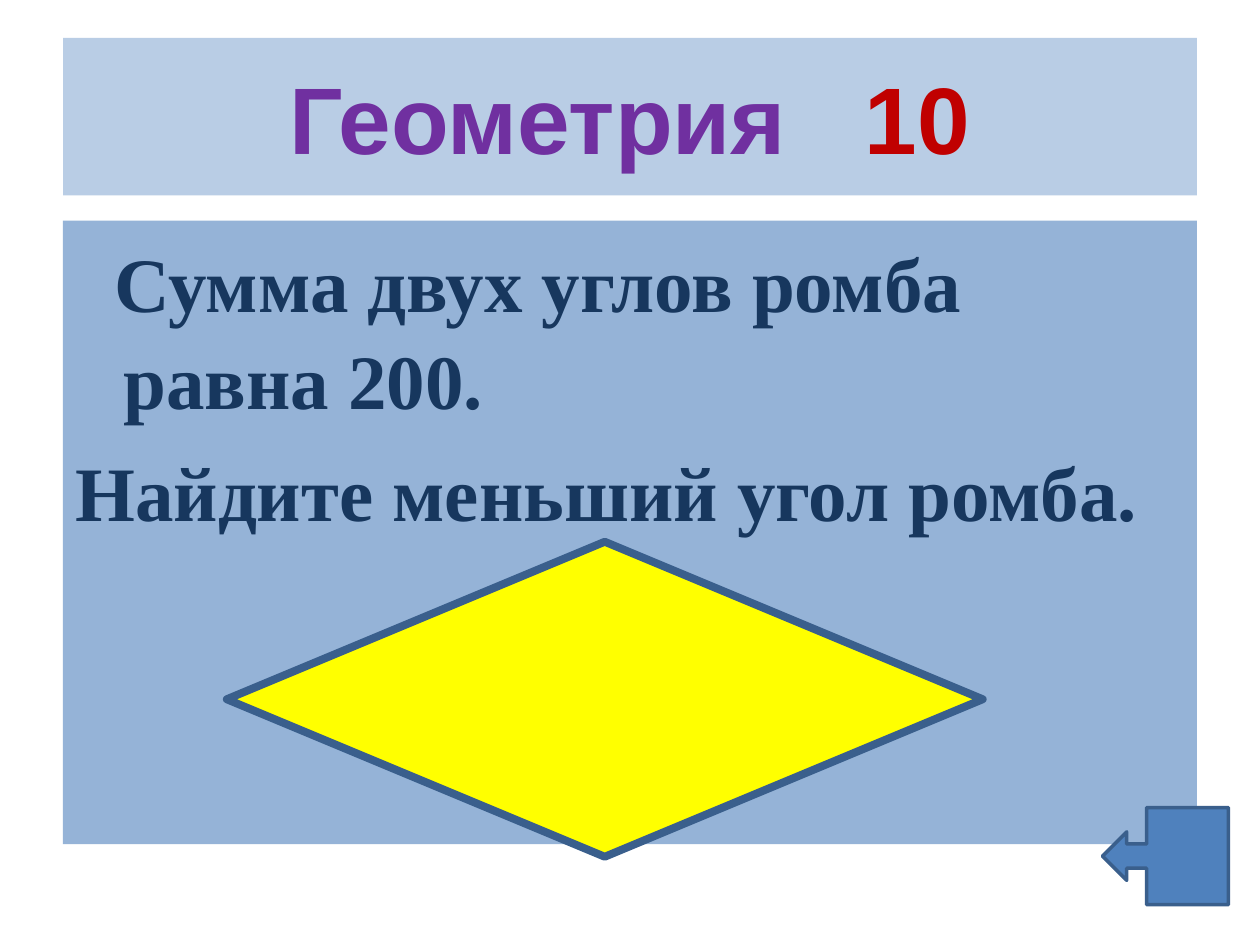
from pptx import Presentation
from pptx.dml.color import RGBColor
from pptx.enum.shapes import MSO_SHAPE
from pptx.enum.text import MSO_ANCHOR, PP_ALIGN
from pptx.util import Inches, Pt

DIAMOND = MSO_SHAPE.DIAMOND
BACK_ARROW = MSO_SHAPE.LEFT_ARROW_CALLOUT
MIDDLE, TOP = MSO_ANCHOR.MIDDLE, MSO_ANCHOR.TOP
CENTER, LEFT = PP_ALIGN.CENTER, PP_ALIGN.LEFT

PALE_BLUE = RGBColor(0xB9, 0xCD, 0xE5)
SOFT_BLUE = RGBColor(0x95, 0xB3, 0xD7)
BLUE = RGBColor(0x4F, 0x81, 0xBD)
OUTLINE = RGBColor(0x3A, 0x5F, 0x8C)
NAVY = RGBColor(0x17, 0x37, 0x5E)
PURPLE = RGBColor(0x70, 0x30, 0xA0)
RED = RGBColor(0xC0, 0x00, 0x00)
YELLOW = RGBColor(0xFF, 0xFF, 0x00)

WIDTH, HEIGHT = Inches(10), Inches(7.5)
TITLE_BOX = (0.05, 0.04, 0.9, 1 / 6)
QUESTION_BOX = (0.05, 0.7 / 3, 0.9, 0.66)
RHOMBUS_BOX = (0.18, 4.3 / 7.5, 0.6, 1 / 3)
BACK_BOX = (0.875, 6.41 / 7.5, 0.1, 0.77 / 7.5)


def to_slide(box):
    """Turn shares of the slide into left, top, width and height."""
    return [round(share * side) for share, side in zip(box, (WIDTH, HEIGHT) * 2)]


def paint(shape, color):
    shape.fill.solid()
    shape.fill.fore_color.rgb = color


def add_span(para, text, font, size, color):
    span = para.add_run()
    span.text = text
    span.font.name, span.font.size = font, Pt(size)
    span.font.bold = True
    span.font.color.rgb = color
    return span


def fill_title(page, box):
    title = page.shapes.title
    title.left, title.top, title.width, title.height = to_slide(box)
    paint(title, PALE_BLUE)
    title.text_frame.vertical_anchor = MIDDLE
    para = title.text_frame.paragraphs[0]
    para.alignment = CENTER
    add_span(para, "Геометрия", "Arial", 54, PURPLE)
    gap = add_span(para, " ", "Arial", 54, PURPLE)
    gap._r.get_or_add_rPr().set("spc", "3000")  # widens the gap by 30 pt
    add_span(para, "10", "Arial", 54, RED)


def add_question(page, box):
    question = page.shapes.add_textbox(*to_slide(box))
    paint(question, SOFT_BLUE)
    frame = question.text_frame
    frame.word_wrap = True
    frame.vertical_anchor = TOP
    frame.margin_top = Inches(0.08)
    lines = [
        ("Сумма двух углов ромба равна 200.", -0.07),
        ("Найдите меньший угол ромба.", -0.38),
    ]
    for number, (text, indent) in enumerate(lines):
        para = frame.add_paragraph() if number else frame.paragraphs[0]
        para.alignment = LEFT
        para.line_spacing = 1.05
        para.space_before = Pt(9 if number else 0)
        settings = para._p.get_or_add_pPr()
        settings.set("marL", str(Inches(0.38)))
        settings.set("indent", str(Inches(indent)))
        add_span(para, text, "Times New Roman", 44, NAVY)


def add_figure(page, kind, box, color, line_width):
    figure = page.shapes.add_shape(kind, *to_slide(box))
    figure.shadow.inherit = False
    paint(figure, color)
    figure.line.color.rgb = OUTLINE
    figure.line.width = Pt(line_width)


def main():
    deck = Presentation()
    deck.slide_width, deck.slide_height = WIDTH, HEIGHT
    page = deck.slides.add_slide(deck.slide_layouts.get_by_name("Title Only"))
    fill_title(page, TITLE_BOX)
    add_question(page, QUESTION_BOX)
    add_figure(page, DIAMOND, RHOMBUS_BOX, YELLOW, 4.5)
    add_figure(page, BACK_ARROW, BACK_BOX, BLUE, 2)
    deck.save("out.pptx")


if __name__ == "__main__":
    main()
